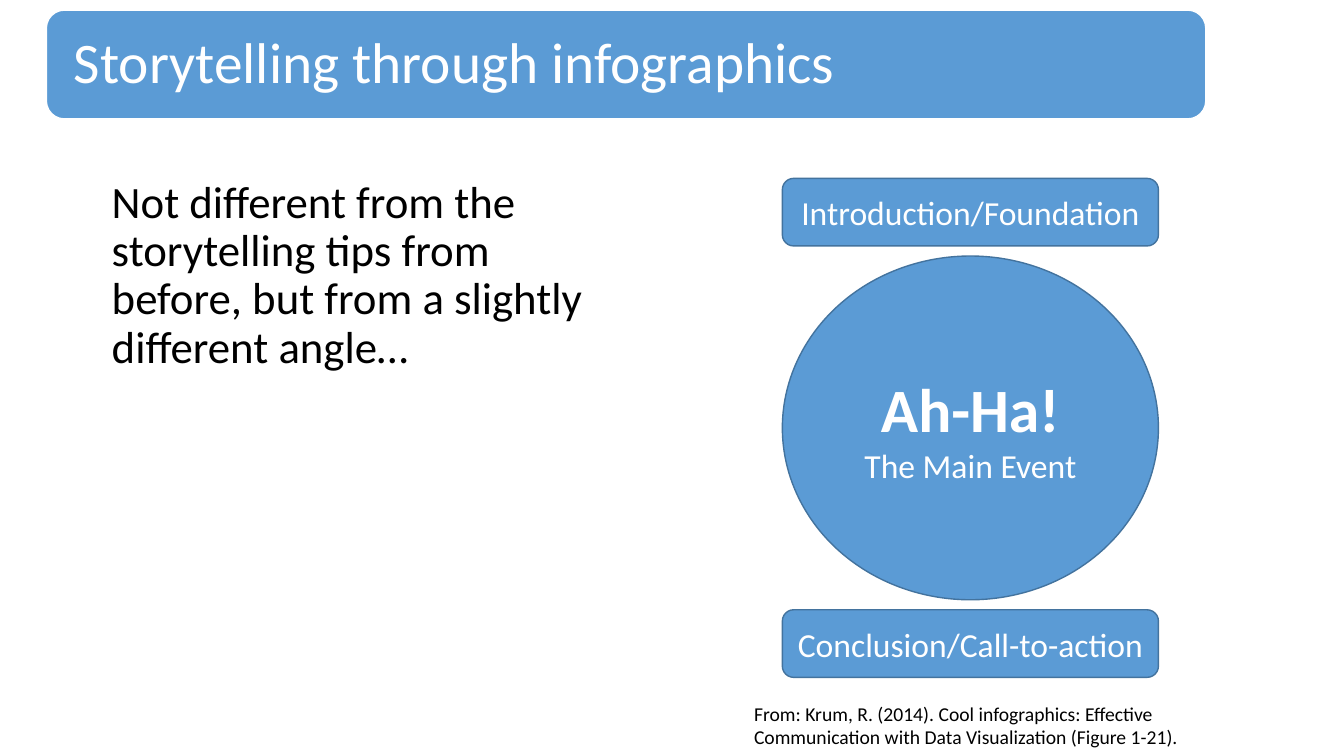
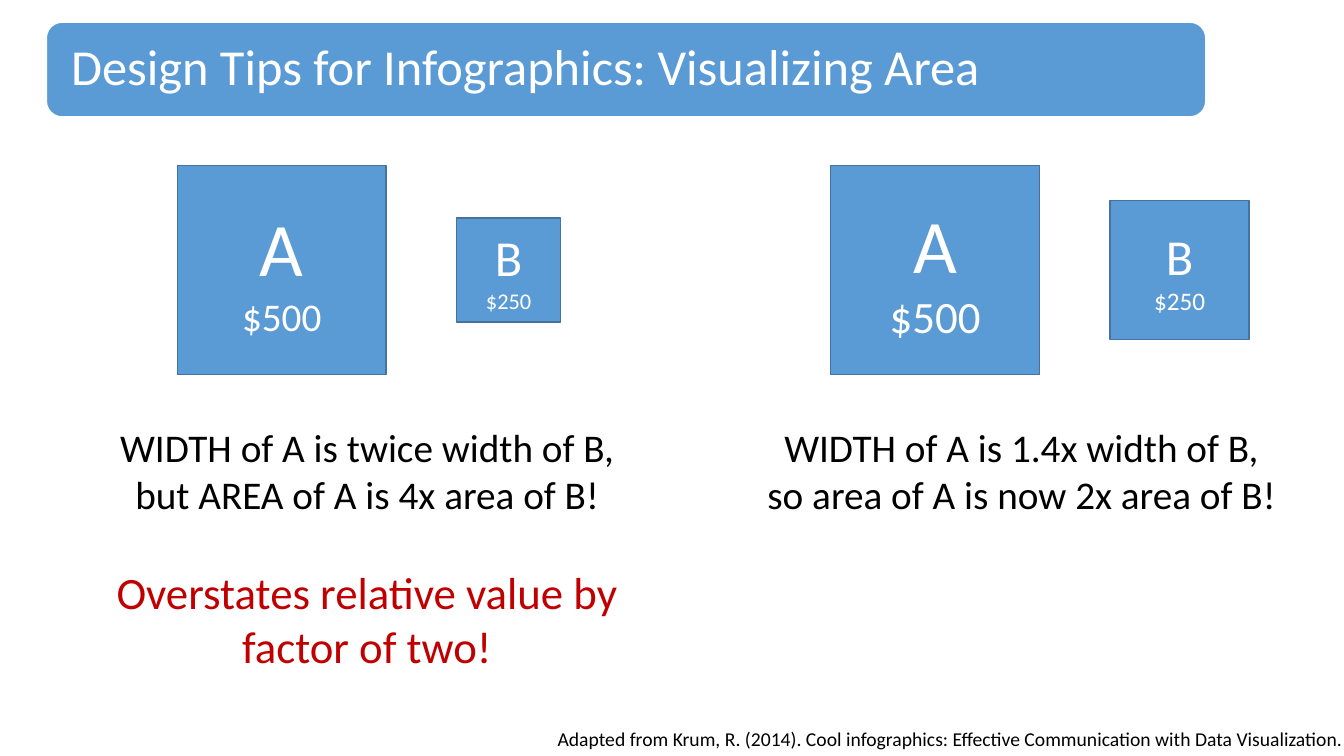
"""Build two slides on infographic storytelling and on showing area."""
from pptx import Presentation
from pptx.dml.color import RGBColor
from pptx.enum.shapes import MSO_SHAPE
from pptx.enum.text import MSO_ANCHOR, PP_ALIGN
from pptx.util import Inches, Pt

BLUE = RGBColor(0x5B, 0x9B, 0xD5)
EDGE = RGBColor(0x43, 0x73, 0x9E)
WHITE = RGBColor(0xFF, 0xFF, 0xFF)
BLACK = RGBColor(0, 0, 0)
RED = RGBColor(0xC0, 0, 0)
FONT = "Calibri"
GAP = 0.1


def write(frame, text, size, color=BLACK, bold=False, align=PP_ALIGN.LEFT,
          lead=None, before=0):
    para = frame.paragraphs[0]
    if para.runs:
        para = frame.add_paragraph()
    para.alignment = align
    para.line_spacing = lead
    para.space_before = Pt(before)
    run = para.add_run()
    run.text = text
    font = run.font
    font.name, font.size, font.bold = FONT, Pt(size), bold
    font.color.rgb = color


def add_box(slide, left, top, width, height):
    box = slide.shapes.add_textbox(*map(Inches, (left, top, width, height)))
    box.text_frame.word_wrap = True
    return box.text_frame


def add_shape(slide, kind, left, top, width, height, edge=EDGE):
    shape = slide.shapes.add_shape(
        kind, *map(Inches, (left, top, width, height)))
    shape.shadow.inherit = False
    shape.fill.solid()
    shape.fill.fore_color.rgb = BLUE
    shape.line.color.rgb = edge
    shape.line.width = Pt(1)
    frame = shape.text_frame
    frame.word_wrap = True
    frame.vertical_anchor = MSO_ANCHOR.MIDDLE
    return frame


def add_title(slide, text, size, top, height, inset):
    frame = add_shape(slide, MSO_SHAPE.ROUNDED_RECTANGLE,
                      0.46, top, 11.5, height, edge=WHITE)
    frame.margin_left = Inches(inset)
    write(frame, text, size, color=WHITE, lead=0.9)


def add_stack(slide, left, top, width, parts):
    for kind, height, lines in parts:
        frame = add_shape(slide, kind, left, top, width, height)
        for text, size, bold in lines:
            write(frame, text, size, color=WHITE, bold=bold,
                  align=PP_ALIGN.CENTER)
        top += height + GAP


def add_pair(slide, left, items):
    middle = 2.68
    for name, value, side, large, small in items:
        frame = add_shape(slide, MSO_SHAPE.RECTANGLE,
                          left, middle - side / 2, side, side)
        for text, size in ((name, large), (value, small)):
            write(frame, text, size, color=WHITE, align=PP_ALIGN.CENTER)
        left += side + 0.7


def add_story(slide):
    add_title(slide, "Storytelling through infographics", 41, 0.1, 1.08, 0.22)
    body = add_box(slide, 1.01, 1.73, 4.88, 5.18)
    write(body, "Not different from the storytelling tips from before, "
          "but from a slightly different angle…", 32, lead=0.9)
    bar = MSO_SHAPE.ROUNDED_RECTANGLE
    add_stack(slide, 7.76, 1.77, 3.73, [
        (bar, 0.67, [("Introduction/Foundation", 24, False)]),
        (MSO_SHAPE.OVAL, 3.41, [("Ah-Ha!", 44, True),
                                ("The Main Event", 24, False)]),
        (bar, 0.67, [("Conclusion/Call-to-action", 24, False)])])
    source = add_box(slide, 7.38, 6.91, 4.98, 0.57)
    write(source, "From: Krum, R. (2014). Cool infographics: Effective "
          "Communication with Data Visualization (Figure 1-21).", 14)


def add_area(slide):
    add_title(slide, "Design Tips for Infographics: Visualizing Area",
              36, 0.22, 0.94, 0.2)
    add_pair(slide, 1.76, [("A", "$500", 2.07, 54, 28),
                           ("B", "$250", 1.03, 36, 16)])
    add_pair(slide, 8.24, [("A", "$500", 2.07, 54, 32),
                           ("B", "$250", 1.38, 36, 18)])
    center = PP_ALIGN.CENTER
    wrong = add_box(slide, 0.9, 4.15, 5.48, 2.59)
    write(wrong, "WIDTH of A is twice width of B, but AREA of A is 4x "
          "area of B!", 28, align=center)
    write(wrong, "Overstates relative value by factor of two!", 32,
          color=RED, align=center, before=34)
    right = add_box(slide, 7.39, 4.15, 5.48, 1.51)
    for text in ("WIDTH of A is 1.4x width of B,",
                 "so area of A is now 2x area of B!"):
        write(right, text, 28, align=center)
    source = add_box(slide, 5.04, 7.16, 8.29, 0.34)
    source.margin_right = Inches(0.01)
    write(source, "Adapted from Krum, R. (2014). Cool infographics: Effective "
          "Communication with Data Visualization.", 14, align=PP_ALIGN.RIGHT)


def main():
    deck = Presentation()
    deck.slide_width, deck.slide_height = Inches(13.33), Inches(7.5)
    for build in (add_story, add_area):
        build(deck.slides.add_slide(deck.slide_layouts[6]))
    deck.save("out.pptx")


if __name__ == "__main__":
    main()
